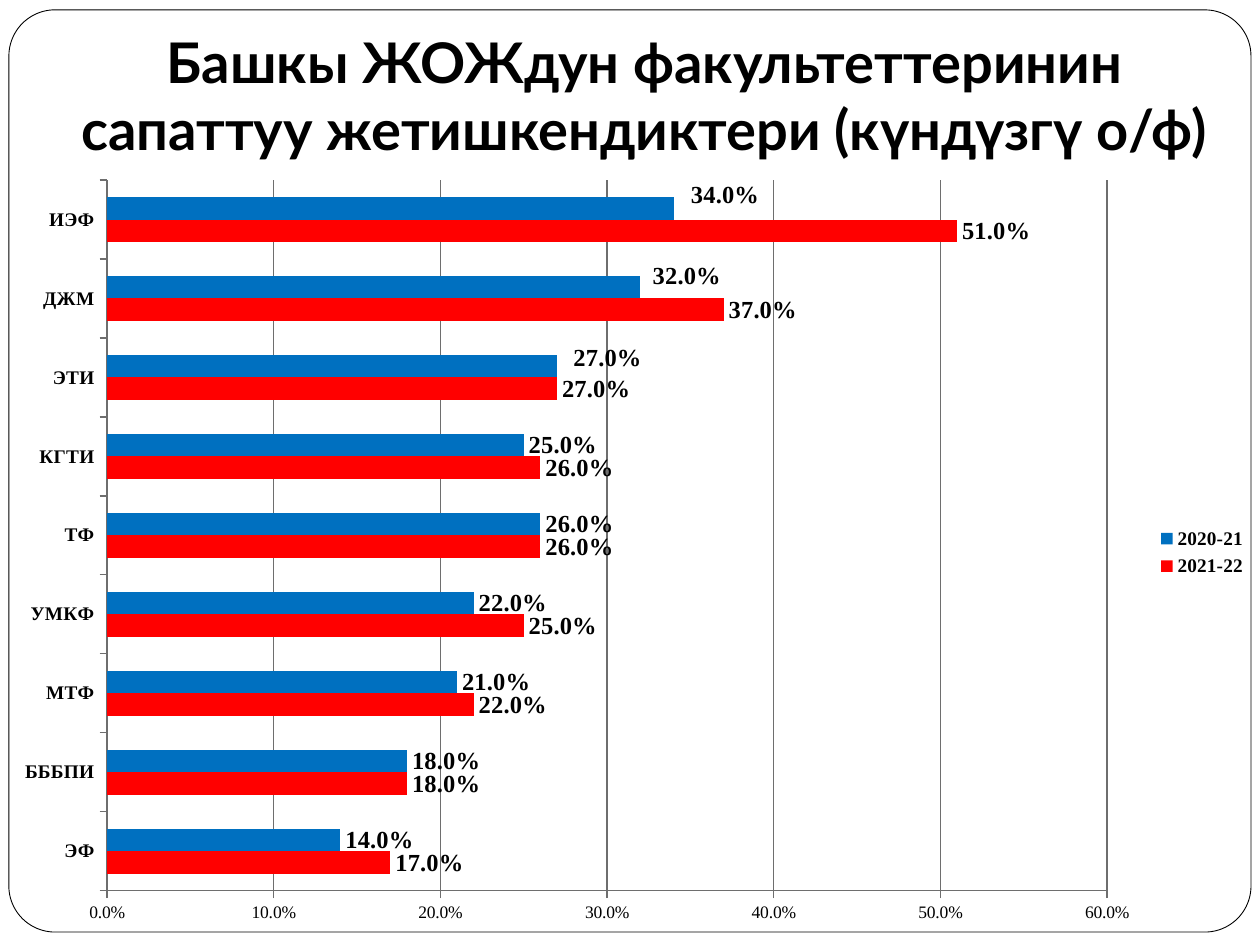
import pptx
import pptx.chart.data
import pptx.dml.color
import pptx.enum.chart
import pptx.enum.shapes
import pptx.enum.text
import pptx.oxml
import pptx.oxml.ns
import pptx.util
from pptx.util import Cm

COLORS = {"paper": "FFFFFF", "ink": "000000", "grid": "6E6E6E",
          "2020-21": "0070C0", "2021-22": "FF0000"}
TITLE_FONT = "Lato"
CHART_FONT = "Times New Roman"
PERCENT = "0.0%"

FACULTIES = ["ЭФ", "БББПИ", "МТФ", "УМКФ", "ТФ", "КГТИ", "ЭТИ", "ДЖМ", "ИЭФ"]
ACHIEVEMENT = {
    "2021-22": [0.17, 0.18, 0.22, 0.25, 0.26, 0.26, 0.27, 0.37, 0.51],
    "2020-21": [0.14, 0.18, 0.21, 0.22, 0.26, 0.25, 0.27, 0.32, 0.34],
}
# Shifts of single value labels
LABEL_SHIFTS = {"ЭТИ": (Cm(0.23), Cm(-0.17)),
                "ДЖМ": (Cm(0.15), Cm(-0.22)),
                "ИЭФ": (Cm(0.25), Cm(-0.27))}


def rgb(name):
    return pptx.dml.color.RGBColor.from_string(COLORS[name])


def style_font(font, size, bold=False, name=CHART_FONT, color="ink"):
    font.size = pptx.util.Pt(size)
    font.bold = bold
    font.name = name
    font.color.rgb = rgb(color)


def write_text(frame, text, align=pptx.enum.text.PP_ALIGN.CENTER, **font_format):
    paragraph = frame.paragraphs[0]
    paragraph.alignment = align
    run = paragraph.add_run()
    run.text = text
    style_font(run.font, **font_format)


def set_layout(parent, position, chart_size, place, inner=False, edge=True):
    """Place a chart part; edge=False shifts it from its usual place."""
    for old in parent.findall(pptx.oxml.ns.qn("c:layout")):
        parent.remove(old)
    parts = ['<c:layoutTarget val="inner"/>'] if inner else []
    if edge:
        parts.append('<c:xMode val="edge"/><c:yMode val="edge"/>')
    for tag, length, whole in zip("xywh", place, chart_size * 2):
        parts.append(f'<c:{tag} val="{length / whole:.4f}"/>')
    parent.insert(position, pptx.oxml.parse_xml(
        f'<c:layout {pptx.oxml.ns.nsdecls("c")}><c:manualLayout>'
        f'{"".join(parts)}</c:manualLayout></c:layout>'))


def draw_frame(slide, left, top, width, height):
    border = slide.shapes.add_shape(
        pptx.enum.shapes.MSO_SHAPE.ROUNDED_RECTANGLE, left, top, width, height)
    border.adjustments[0] = 0.05
    border.shadow.inherit = False
    border.fill.solid()
    border.fill.fore_color.rgb = rgb("paper")
    border.line.color.rgb = rgb("ink")
    border.line.width = pptx.util.Pt(0.5)
    # Send behind the title
    border.element.getparent().insert(2, border.element)


def place_title(slide, left, top, width, height):
    title = slide.shapes.title
    title.left, title.top, title.width, title.height = left, top, width, height
    frame = title.text_frame
    frame.word_wrap = True
    frame.auto_size = pptx.enum.text.MSO_AUTO_SIZE.NONE
    frame.vertical_anchor = pptx.enum.text.MSO_ANCHOR.BOTTOM
    frame.margin_bottom = Cm(0.25)
    write_text(frame, "Башкы ЖОЖдун факультеттеринин сапаттуу "
               "жетишкендиктери (күндүзгү о/ф)", size=32, bold=True, name=TITLE_FONT)


def style_axes(chart):
    faculty_axis, share_axis = chart.category_axis, chart.value_axis
    style_font(faculty_axis.tick_labels.font, 11, bold=True)
    style_font(share_axis.tick_labels.font, 10)
    share_axis.tick_labels.number_format = PERCENT
    share_axis.tick_labels.number_format_is_linked = False
    share_axis.minimum_scale, share_axis.maximum_scale = 0, 0.6
    share_axis.major_unit = 0.1
    share_axis.has_major_gridlines = True
    lines = [share_axis.major_gridlines.format.line]
    for axis in (faculty_axis, share_axis):
        axis.major_tick_mark = pptx.enum.chart.XL_TICK_MARK.OUTSIDE
        lines.append(axis.format.line)
    for line in lines:
        line.color.rgb = rgb("grid")
        line.width = pptx.util.Pt(0.75)


def style_series(series):
    series.format.fill.solid()
    series.format.fill.fore_color.rgb = rgb(series.name)
    series.invert_if_negative = False
    labels = series.data_labels
    labels.show_value = True
    labels.number_format = PERCENT
    labels.number_format_is_linked = False
    labels.position = pptx.enum.chart.XL_LABEL_POSITION.OUTSIDE_END
    style_font(labels.font, 14, bold=True)
    # No leader lines to shifted labels
    for leader in labels._element.findall(pptx.oxml.ns.qn("c:showLeaderLines")):
        leader.set("val", "0")


def shift_labels(series, chart_size):
    for faculty, shift in LABEL_SHIFTS.items():
        index = FACULTIES.index(faculty)
        label = series.points[index].data_label
        style_font(label.font, 14, bold=True)
        label.position = pptx.enum.chart.XL_LABEL_POSITION.OUTSIDE_END
        for item in series.data_labels._element.findall(pptx.oxml.ns.qn("c:dLbl")):
            if item.find(pptx.oxml.ns.qn("c:idx")).get("val") == str(index):
                set_layout(item, 1, chart_size, shift, edge=False)


def draw_chart(slide, left, top, width, height):
    data = pptx.chart.data.CategoryChartData(number_format=PERCENT)
    data.categories = FACULTIES
    for year, shares in ACHIEVEMENT.items():
        data.add_series(year, shares)
    chart = slide.shapes.add_chart(
        pptx.enum.chart.XL_CHART_TYPE.BAR_CLUSTERED,
        left, top, width, height, data).chart
    chart_size = (width, height)
    chart.has_title = False
    style_font(chart.font, 10)
    style_axes(chart)

    # Bars and value labels
    plot = chart.plots[0]
    plot.gap_width = 150
    plot.overlap = 0
    plot.vary_by_categories = False
    for series in plot.series:
        style_series(series)
    shift_labels(plot.series[1], chart_size)

    # Legend and plot area places
    chart.has_legend = True
    legend = chart.legend
    legend.position = pptx.enum.chart.XL_LEGEND_POSITION.RIGHT
    legend.include_in_layout = False
    style_font(legend.font, 11, bold=True)
    set_layout(legend._element, 1, chart_size,
               (Cm(23.22), Cm(7.18), Cm(2.03), Cm(1.25)))
    plot_area = chart.element.find(".//" + pptx.oxml.ns.qn("c:plotArea"))
    set_layout(plot_area, 0, chart_size,
               (Cm(2.16), Cm(0.3), Cm(20.16), Cm(14.33)), inner=True)


def main():
    deck = pptx.Presentation()
    deck.slide_width, deck.slide_height = Cm(25.4), Cm(19.05)
    slide = deck.slides.add_slide(deck.slide_layouts.get_by_name("Title Only"))
    draw_frame(slide, Cm(0.18), Cm(0.2), Cm(25.04), Cm(18.59))
    place_title(slide, Cm(0.89), Cm(0.33), Cm(24.21), Cm(3.18))
    draw_chart(slide, Cm(0), Cm(3.33), Cm(25.4), Cm(15.6))
    deck.save("out.pptx")


if __name__ == "__main__":
    main()
